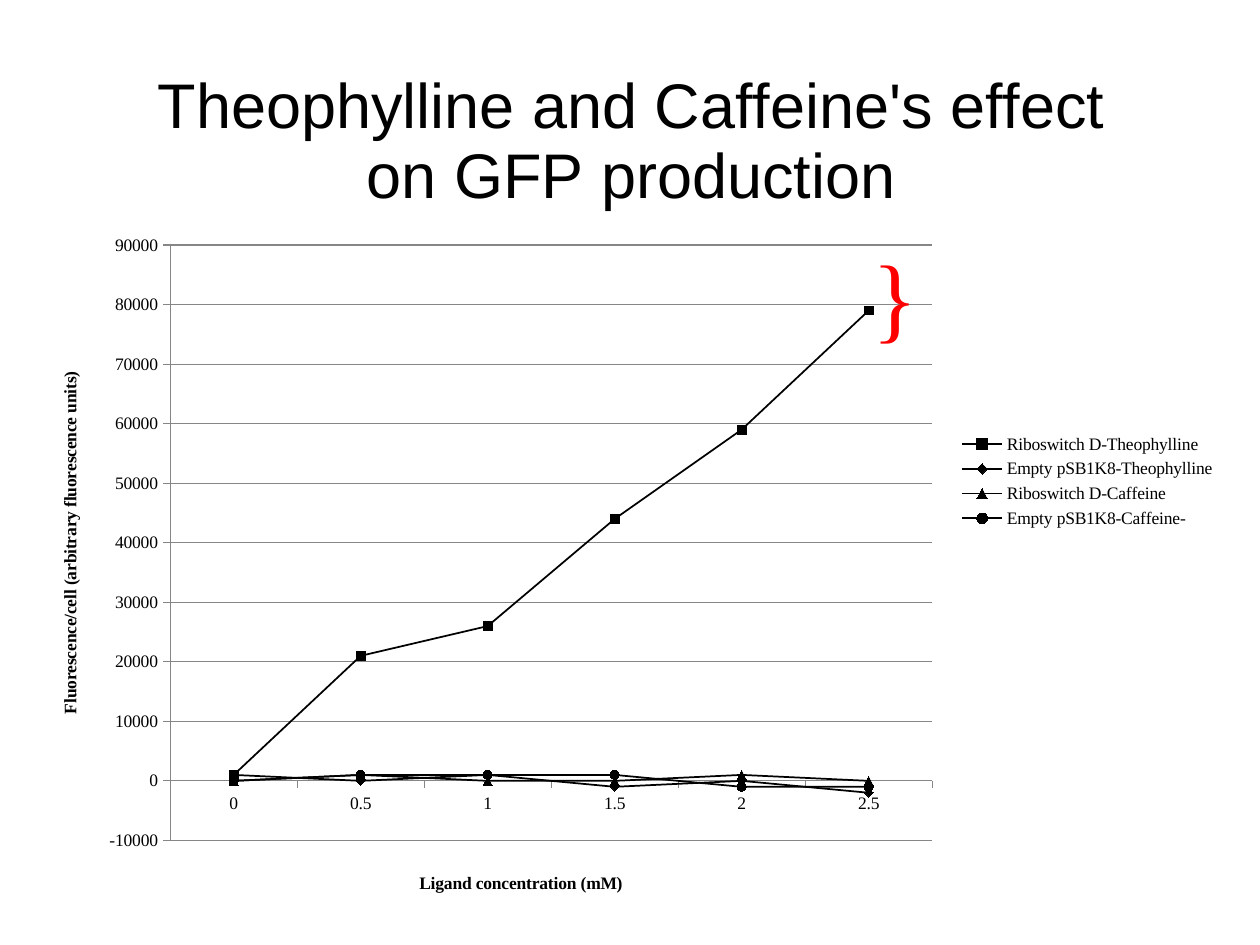
from lxml import etree
from pptx import Presentation
from pptx.chart.data import CategoryChartData
from pptx.dml.color import RGBColor
from pptx.enum.chart import XL_CHART_TYPE, XL_LEGEND_POSITION, XL_MARKER_STYLE, XL_TICK_MARK
from pptx.enum.text import MSO_AUTO_SIZE
from pptx.oxml.ns import qn
from pptx.util import Inches, Pt

LINE_MARKERS = XL_CHART_TYPE.LINE_MARKERS
RIGHT = XL_LEGEND_POSITION.RIGHT
OUTSIDE, NONE = XL_TICK_MARK.OUTSIDE, XL_TICK_MARK.NONE
SQUARE, DIAMOND = XL_MARKER_STYLE.SQUARE, XL_MARKER_STYLE.DIAMOND
TRIANGLE, CIRCLE = XL_MARKER_STYLE.TRIANGLE, XL_MARKER_STYLE.CIRCLE
BLACK, GRAY, RED = "000000", "868686", "FF0000"


def color(value):
    return RGBColor.from_string(value)


def write(p, text, font, size, bold=False, fill=BLACK):
    r = p.add_run()
    r.text = text
    for name, value in {"name": font, "size": Pt(size), "bold": bold}.items():
        setattr(r.font, name, value)
    r.font.color.rgb = color(fill)


prs = Presentation()
prs.slide_width, prs.slide_height = Inches(10), Inches(7.5)
s = prs.slides.add_slide(prs.slide_layouts[6])

# Fluorescence at each ligand concentration
lines = [
    ("Riboswitch D-Theophylline", SQUARE, (1000, 21000, 26000, 44000, 59000, 79000)),
    ("Empty pSB1K8-Theophylline", DIAMOND, (1000, 0, 1000, -1000, 0, -2000)),
    ("Riboswitch D-Caffeine", TRIANGLE, (0, 1000, 0, 0, 1000, 0)),
    ("Empty pSB1K8-Caffeine-", CIRCLE, (0, 1000, 1000, 1000, -1000, -1000)),
]
data = CategoryChartData()
data.categories = [0.0, 0.5, 1.0, 1.5, 2.0, 2.5]
for name, marker, values in lines:
    data.add_series(name, values)
chart = s.shapes.add_chart(LINE_MARKERS, Inches(0.27), Inches(0.33),
                           Inches(9.48), Inches(6.98), data).chart
chart.font.name, chart.font.size = "Times New Roman", Pt(10)
chart.font.color.rgb = color(BLACK)

# Title on two lines
tf = chart.chart_title.text_frame
write(tf.paragraphs[0], "Theophylline and Caffeine's effect", "Arial", 36)
write(tf.add_paragraph(), "on GFP production", "Arial", 36)
chart.chart_title.include_in_layout = False

# Axes
cat_axis, val_axis = chart.category_axis, chart.value_axis
for axis, title in ((cat_axis, "Ligand concentration (mM)"),
                    (val_axis, "Fluorescence/cell (arbitrary fluorescence units)")):
    write(axis.axis_title.text_frame.paragraphs[0], title, "Times New Roman", 10, bold=True)
    axis.major_tick_mark, axis.minor_tick_mark = OUTSIDE, NONE
    axis.format.line.color.rgb = color(GRAY)
    axis.format.line.width = Pt(0.75)
    axis.tick_labels.number_format = "General"
    axis.tick_labels.number_format_is_linked = False

# Scale and gridlines
val_axis.minimum_scale, val_axis.maximum_scale, val_axis.major_unit = -10000, 90000, 10000
val_axis.has_major_gridlines = True
val_axis.major_gridlines.format.line.color.rgb = color(GRAY)
val_axis.major_gridlines.format.line.width = Pt(0.75)

# Legend
chart.has_legend = True
chart.legend.position = RIGHT
chart.legend.include_in_layout = False

# Black lines told apart by their markers
chart.plots[0].vary_by_categories = False
for series, (name, marker, values) in zip(chart.plots[0].series, lines):
    series.smooth = False
    series.format.line.color.rgb = color(BLACK)
    series.format.line.width = Pt(1)
    series.marker.style, series.marker.size = marker, 5
    series.marker.format.fill.solid()
    series.marker.format.fill.fore_color.rgb = color(BLACK)
    series.marker.format.line.color.rgb = color(BLACK)

# Inner plot area as fractions of the chart
plot_area = chart.element.find(".//" + qn("c:plotArea"))
layout = plot_area.find(qn("c:layout"))
if layout is None:
    layout = etree.Element(qn("c:layout"))
    plot_area.insert(0, layout)
manual = etree.SubElement(layout, qn("c:manualLayout"))
for tag, value in (("layoutTarget", "inner"), ("xMode", "edge"), ("yMode", "edge"),
                   ("x", 0.114), ("y", 0.2315), ("w", 0.638), ("h", 0.677)):
    etree.SubElement(manual, qn("c:" + tag)).set("val", str(value))

# Red brace beside the last point
tf = s.shapes.add_textbox(Inches(6.83), Inches(1.83), Inches(0.57), Inches(1.01)).text_frame
tf.word_wrap = False
tf.auto_size = MSO_AUTO_SIZE.SHAPE_TO_FIT_TEXT
write(tf.paragraphs[0], "}", "Times New Roman", 54, fill=RED)

prs.save("out.pptx")
